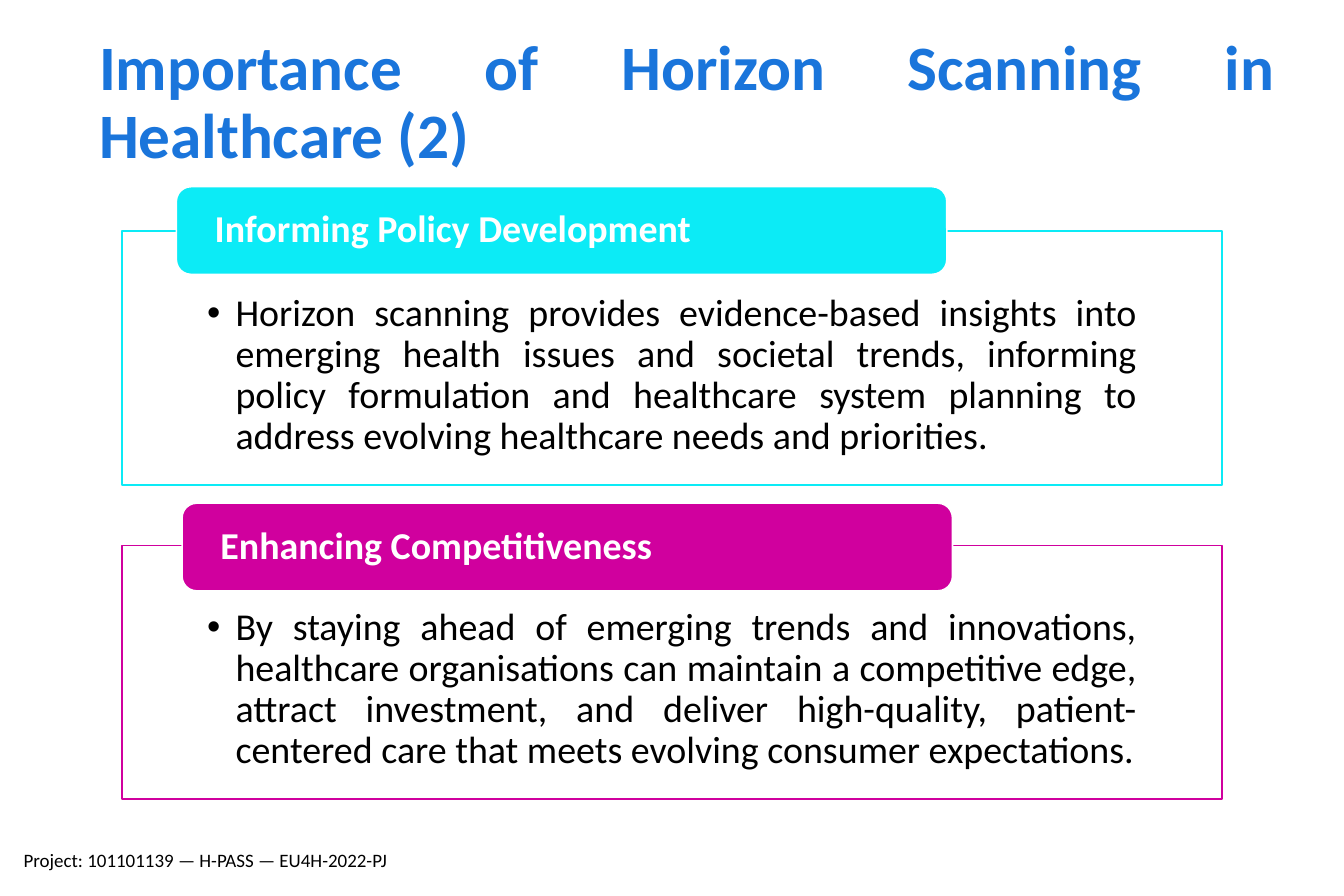
from pptx import Presentation
from pptx.dml.color import RGBColor
from pptx.enum.shapes import MSO_SHAPE
from pptx.enum.text import MSO_ANCHOR, MSO_AUTO_SIZE, PP_ALIGN
from pptx.util import Inches, Pt

LEFT, JUSTIFY = PP_ALIGN.LEFT, PP_ALIGN.JUSTIFY
TOP, MIDDLE = MSO_ANCHOR.TOP, MSO_ANCHOR.MIDDLE
NO_AUTOFIT = MSO_AUTO_SIZE.NONE
ROUNDED = MSO_SHAPE.ROUNDED_RECTANGLE


def rgb(value):
    return RGBColor.from_string(value)


def write(sp, text, size=24, color="000000", bold=False, align=LEFT, anchor=TOP,
          insets=(0.1, 0.05, 0.1, 0.05), spacing=0.9):
    tf = sp.text_frame
    tf.word_wrap = True
    tf.auto_size = NO_AUTOFIT
    tf.vertical_anchor = anchor
    tf.margin_left, tf.margin_top, tf.margin_right, tf.margin_bottom = map(Inches, insets)
    p = tf.paragraphs[0]
    p.alignment = align
    p.line_spacing = spacing
    p.space_before = Pt(0)
    r = p.add_run()
    r.text = text
    r.font.name = "Calibri"
    r.font.size = Pt(size)
    r.font.bold = bold
    r.font.color.rgb = rgb(color)
    return p


prs = Presentation()
prs.slide_width, prs.slide_height = Inches(11.81), Inches(7.87)
s = prs.slides.add_slide(prs.slide_layouts[3])

title, *bodies = s.placeholders
title.left, title.top, title.width, title.height = map(Inches, (0.77, 0.22, 10.53, 1.39))
write(title, "Importance of Horizon Scanning in Healthcare (2)",
      size=40, color="1A75DB", bold=True, align=JUSTIFY, anchor=MIDDLE)

sections = [
    ("Informing Policy Development", "0CEBF6", 2.03, 1.55, 1.64,
     "Horizon scanning provides evidence-based insights into emerging health issues "
     "and societal trends, informing policy formulation and healthcare system planning "
     "to address evolving healthcare needs and priorities."),
    ("Enhancing Competitiveness", "D0009E", 4.79, 1.6, 4.42,
     "By staying ahead of emerging trends and innovations, healthcare organisations "
     "can maintain a competitive edge, attract investment, and deliver high-quality, "
     "patient-centered care that meets evolving consumer expectations."),
]

for body, (heading, color, body_top, tab_left, tab_top, text) in zip(bodies, sections):
    body.left, body.top, body.width, body.height = map(Inches, (1.07, body_top, 9.67, 2.23))
    body.line.color.rgb = rgb(color)
    body.line.width = Pt(1)
    p = write(body, text, align=JUSTIFY, insets=(0.75, 0.55, 0.75, 0.19))
    pPr = p._p.get_or_add_pPr()
    pPr.set("marL", str(Inches(0.25)))
    pPr.set("indent", str(Inches(-0.25)))

    tab = s.shapes.add_shape(ROUNDED, Inches(tab_left), Inches(tab_top), Inches(6.77), Inches(0.77))
    tab.shadow.inherit = False
    tab.fill.solid()
    tab.fill.fore_color.rgb = rgb(color)
    tab.line.color.rgb = rgb("FFFFFF")
    tab.line.width = Pt(1)
    write(tab, heading, color="FFFFFF", bold=True, anchor=MIDDLE, insets=(0.3, 0, 0.3, 0))

project = s.shapes.add_textbox(Inches(0.11), Inches(7.4), Inches(3.63), Inches(0.27))
write(project, "Project: 101101139 — H-PASS — EU4H-2022-PJ", size=12, spacing=1)

prs.save("out.pptx")
